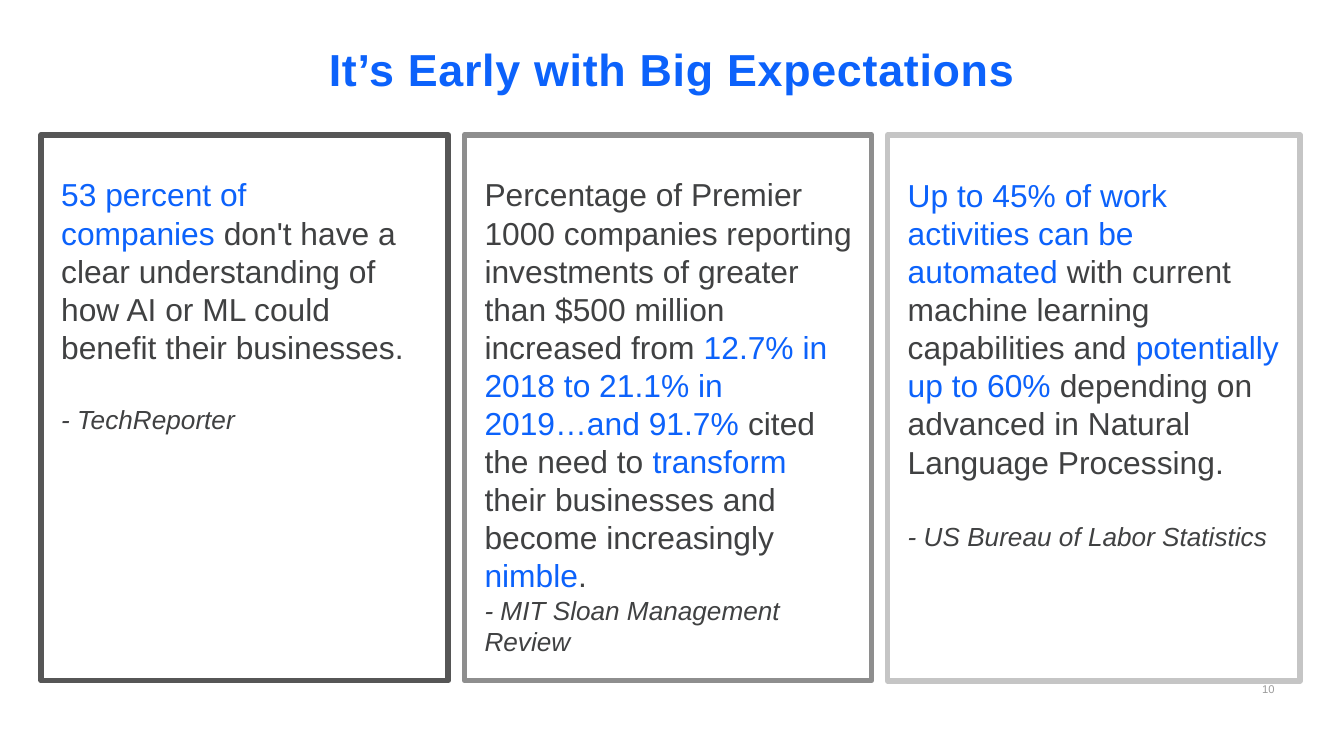
from pptx import Presentation
from pptx.dml.color import RGBColor
from pptx.enum.shapes import MSO_SHAPE
from pptx.enum.text import MSO_ANCHOR, MSO_AUTO_SIZE, PP_ALIGN
from pptx.util import Pt

RECT = MSO_SHAPE.RECTANGLE
TOP, BOTTOM = MSO_ANCHOR.TOP, MSO_ANCHOR.BOTTOM
LEFT, CENTER, RIGHT = PP_ALIGN.LEFT, PP_ALIGN.CENTER, PP_ALIGN.RIGHT
NO_FIT = MSO_AUTO_SIZE.NONE
BLUE, DARK = "0C62FB", "404142"

CARDS = [
    ("565656", (22, 72.3, 218.2, 292.3), 20.4, [
        "|53 percent of", "|companies |don't have a", "clear understanding of",
        "how AI or ML could", "benefit their businesses."],
        ["- TechReporter"]),
    ("8E8E8E", (248.8, 72.3, 218.2, 292.3), 0, [
        "Percentage of Premier", "1000 companies reporting",
        "investments of greater", "than $500 million",
        "increased from |12.7% in", "|2018 to 21.1% in",
        "|2019…and 91.7% |cited", "the need to |transform",
        "their businesses and", "become increasingly", "|nimble|."],
        ["- MIT Sloan Management", "Review"]),
    ("C5C5C5", (475.5, 72.5, 221, 292.3), 21.6, [
        "|Up to 45% of work activities can be automated |with current machine "
        "learning capabilities and |potentially up to 60% |depending on "
        "advanced in Natural Language Processing."],
        ["- US Bureau of Labor Statistics"]),
]


def color(code):
    """Turn a hex string into a colour."""
    return RGBColor.from_string(code)


def write(para, text, size=17, ink=DARK, bold=False, italic=False,
          align=LEFT, lead=1.0, gap=0, track=0):
    """Fill a paragraph; bars in the text switch between ink and blue."""
    para.alignment, para.line_spacing = align, lead
    para.space_before, para.space_after = Pt(gap), Pt(0)
    for i, part in enumerate(text.split("|")):
        if not part:
            continue
        run = para.add_run()
        run.text = part
        font = run.font
        font.name, font.size = "Arial", Pt(size)
        font.bold, font.italic = bold, italic
        font.color.rgb = color(BLUE if i % 2 else ink)
        if track:
            run._r.get_or_add_rPr().set("spc", str(track))


def setup(frame, pads, anchor):
    """Set a text frame's insets, anchor and wrapping."""
    frame.word_wrap, frame.auto_size = True, NO_FIT
    frame.vertical_anchor = anchor
    (frame.margin_left, frame.margin_top,
     frame.margin_right, frame.margin_bottom) = map(Pt, pads)


def add_title(slide, box, text):
    """Place the slide title in its box."""
    title = slide.shapes.title
    title.left, title.top, title.width, title.height = map(Pt, box)
    setup(title.text_frame, (7.2, 3.6, 7.2, 3.6), TOP)
    write(title.text_frame.paragraphs[0], text, size=24, ink=BLUE,
          bold=True, align=CENTER, lead=0.9, track=40)


def add_number(slide, box, text):
    """Place the page number in its box."""
    frame = slide.shapes.add_textbox(*map(Pt, box)).text_frame
    setup(frame, (0, 0, 0, 0), BOTTOM)
    write(frame.paragraphs[0], text, size=6, ink="9B9B9B",
          align=RIGHT, lead=1.5)


def add_card(group, box, edge, gap, lines, source):
    """Place one framed quote and its source in a box."""
    card = group.shapes.add_shape(RECT, *map(Pt, box))
    card.shadow.inherit = False
    card.fill.solid()
    card.fill.fore_color.rgb = color("FFFFFF")
    card.line.color.rgb = color(edge)
    card.line.width = Pt(3)
    frame = card.text_frame
    setup(frame, (10.8, 21.6, 9, 7.2), TOP)
    for i, line in enumerate(lines):
        para = frame.add_paragraph() if i else frame.paragraphs[0]
        write(para, line)
    for i, line in enumerate(source):
        write(frame.add_paragraph(), line, size=14, italic=True,
              gap=0 if i else gap)


def main():
    """Build and save the slide."""
    deck = Presentation()
    deck.slide_width, deck.slide_height = Pt(720), Pt(405)
    slide = deck.slides.add_slide(deck.slide_layouts[5])
    add_number(slide, (640.8, 359.3, 42, 13.7), "10")
    group = slide.shapes.add_group_shape()
    for edge, box, gap, lines, source in CARDS:
        add_card(group, box, edge, gap, lines, source)
    add_title(slide, (30.5, 22, 658.8, 25.2),
              "It’s Early with Big Expectations")
    deck.save("out.pptx")


if __name__ == "__main__":
    main()
